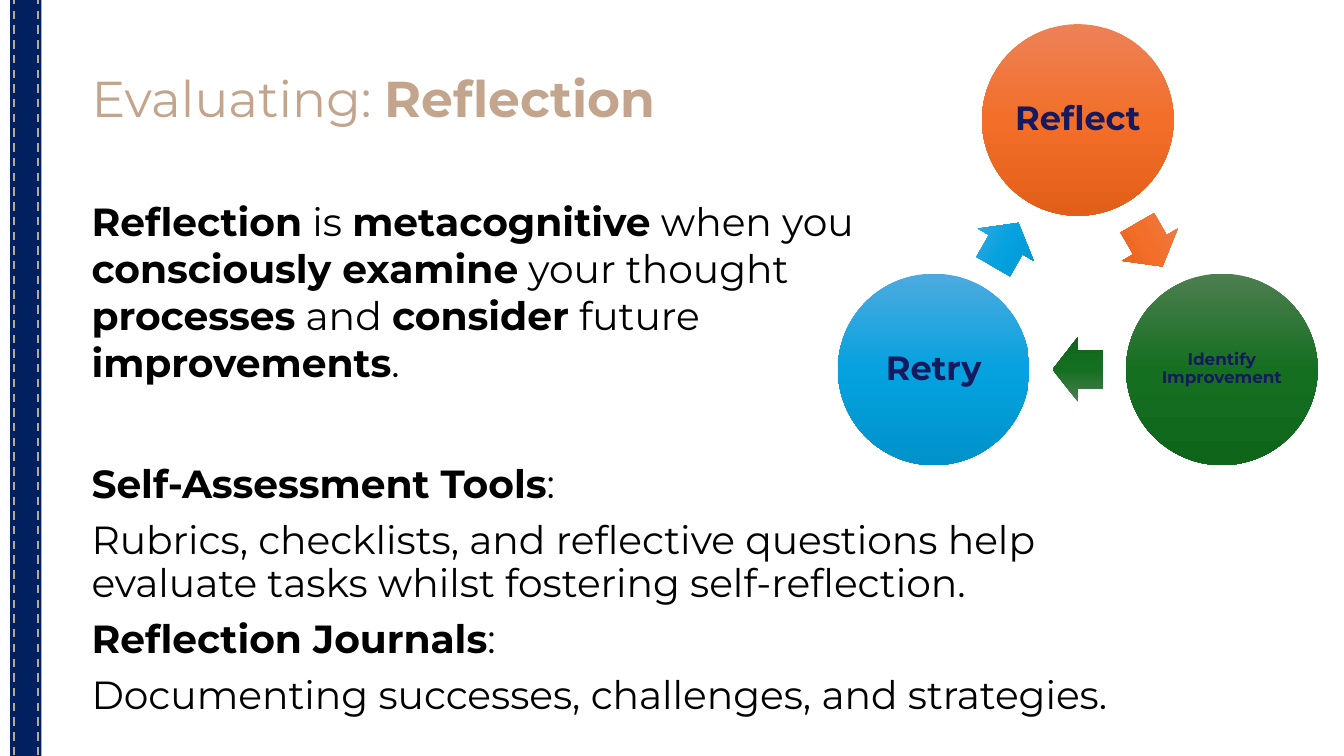
"""Build the slide on reflection, with its three-step cycle."""
from copy import deepcopy
from math import cos, radians, sin

from lxml.etree import SubElement
from pptx import Presentation
from pptx.dml.color import RGBColor
from pptx.enum.dml import MSO_LINE
from pptx.enum.shapes import MSO_CONNECTOR, MSO_SHAPE
from pptx.enum.text import MSO_ANCHOR, PP_ALIGN
from pptx.oxml.ns import qn
from pptx.util import Inches, Pt

FONT, TAN, NAVY, BLACK, INK = "Montserrat", "C3A48C", "002060", "000000", "15195D"

TEXTS = [
    ((0.81, 0.68, 8.29, 0.81), 36, TAN, 0.9, ["Evaluating: *Reflection*"]),
    ((0.81, 1.91, 8.72, 2.21), 28, BLACK, 1.0, [
        "*Reflection* is *metacognitive* when you *consciously examine* your thought "
        "*processes* and *consider* future *improvements*."]),
    ((0.81, 4.56, 11.27, 2.7), 28, BLACK, 0.9, [
        "*Self-Assessment Tools*:",
        "Rubrics, checklists, and reflective questions help evaluate tasks "
        "whilst fostering self-reflection.",
        "*Reflection Journals*:",
        "Documenting successes, challenges, and strategies."]),
]
STEPS = [
    ("Reflect", 24, ("ED8257", "F26E29", "E25F1A")),
    ("Identify Improvement", 12, ("4D7E50", "156F21", "0F661B")),
    ("Retry", 24, ("4CAADF", "05A2DF", "0092CB")),
]
RAIL = (0.1, -0.01, 0.31, 7.51)
SEAMS = (0.14, 0.38)
HUB, RING = (10.69, 2.84), 1.65
DISC, ARROW = (1.9, 1.9), (0.5, 0.64)


def paint(fmt, code):
    """Set a colour from a hex string."""
    fmt.rgb = RGBColor.from_string(code)


def style(obj, **values):
    """Set each named format value on an object."""
    for name, value in values.items():
        setattr(obj, name, value)


def write(para, text, size, code, lead):
    """Fill a paragraph, with bold between stars."""
    para.line_spacing = lead
    for num, part in enumerate(text.split("*")):
        if part:
            run = para.add_run()
            run.text = part
            style(run.font, name=FONT, size=Pt(size), bold=num % 2 == 1)
            paint(run.font.color, code)


def add_text(slide, box, size, code, lead, lines):
    """Add a wrapped text box."""
    frame = slide.shapes.add_textbox(*map(Inches, box)).text_frame
    frame.word_wrap = True
    for num, line in enumerate(lines):
        para = frame.add_paragraph() if num else frame.paragraphs[0]
        para.space_before = Pt(10 if num else 0)
        write(para, line, size, code, lead)


def add_form(slide, kind, box):
    """Add a shape with no shadow and no outline."""
    shape = slide.shapes.add_shape(kind, *map(Inches, box))
    shape.shadow.inherit = False
    shape.line.fill.background()
    return shape


def blend(fill, codes):
    """Apply an even gradient from top to bottom."""
    fill.gradient()
    fill.gradient_angle = 270
    stops = fill._fill._gradFill.find(qn("a:gsLst"))
    stops.append(deepcopy(stops[0]))
    for num, (stop, code) in enumerate(zip(fill.gradient_stops, codes)):
        stop.position = num / (len(codes) - 1)
        paint(stop.color, code)


def orbit(angle, reach, size):
    """Return the box centred at an angle around the hub."""
    turn = radians(angle)
    left = HUB[0] + reach * cos(turn) - size[0] / 2
    top = HUB[1] + reach * sin(turn) - size[1] / 2
    return left, top, *size


def add_rail(slide):
    """Add the stitched band on the left."""
    band = add_form(slide, MSO_SHAPE.RECTANGLE, RAIL)
    band.fill.solid()
    paint(band.fill.fore_color, NAVY)
    for left in SEAMS:
        ends = map(Inches, (left, -0.04, left, 7.53))
        seam = slide.shapes.add_connector(MSO_CONNECTOR.STRAIGHT, *ends)
        style(seam.line, width=Pt(1.5), dash_style=MSO_LINE.DASH)
        paint(seam.line.color, TAN)
        SubElement(seam._element.spPr, qn("a:effectLst"))


def add_cycle(slide):
    """Add the discs and the arrows between them."""
    for num, (text, size, codes) in enumerate(STEPS):
        angle = num * 360 / len(STEPS) - 90
        disc = add_form(slide, MSO_SHAPE.OVAL, orbit(angle, RING, DISC))
        blend(disc.fill, codes)
        frame = disc.text_frame
        edge = Inches(0.03)
        style(frame, word_wrap=True, vertical_anchor=MSO_ANCHOR.MIDDLE,
              margin_left=edge, margin_right=edge, margin_top=edge, margin_bottom=edge)
        frame.paragraphs[0].alignment = PP_ALIGN.CENTER
        write(frame.paragraphs[0], f"*{text}*", size, INK, 0.9)
        place = orbit(angle + 60, RING / 2, ARROW)
        arrow = add_form(slide, MSO_SHAPE.RIGHT_ARROW, place)
        arrow.adjustments[0], arrow.adjustments[1] = 0.6, 0.5
        arrow.rotation = angle + 150
        blend(arrow.fill, codes)


def main():
    """Build and save the deck."""
    deck = Presentation()
    style(deck, slide_width=Inches(13.33), slide_height=Inches(7.5))
    slide = deck.slides.add_slide(deck.slide_layouts[6])
    add_rail(slide)
    for item in TEXTS:
        add_text(slide, *item)
    add_cycle(slide)
    deck.save("out.pptx")


if __name__ == "__main__":
    main()
